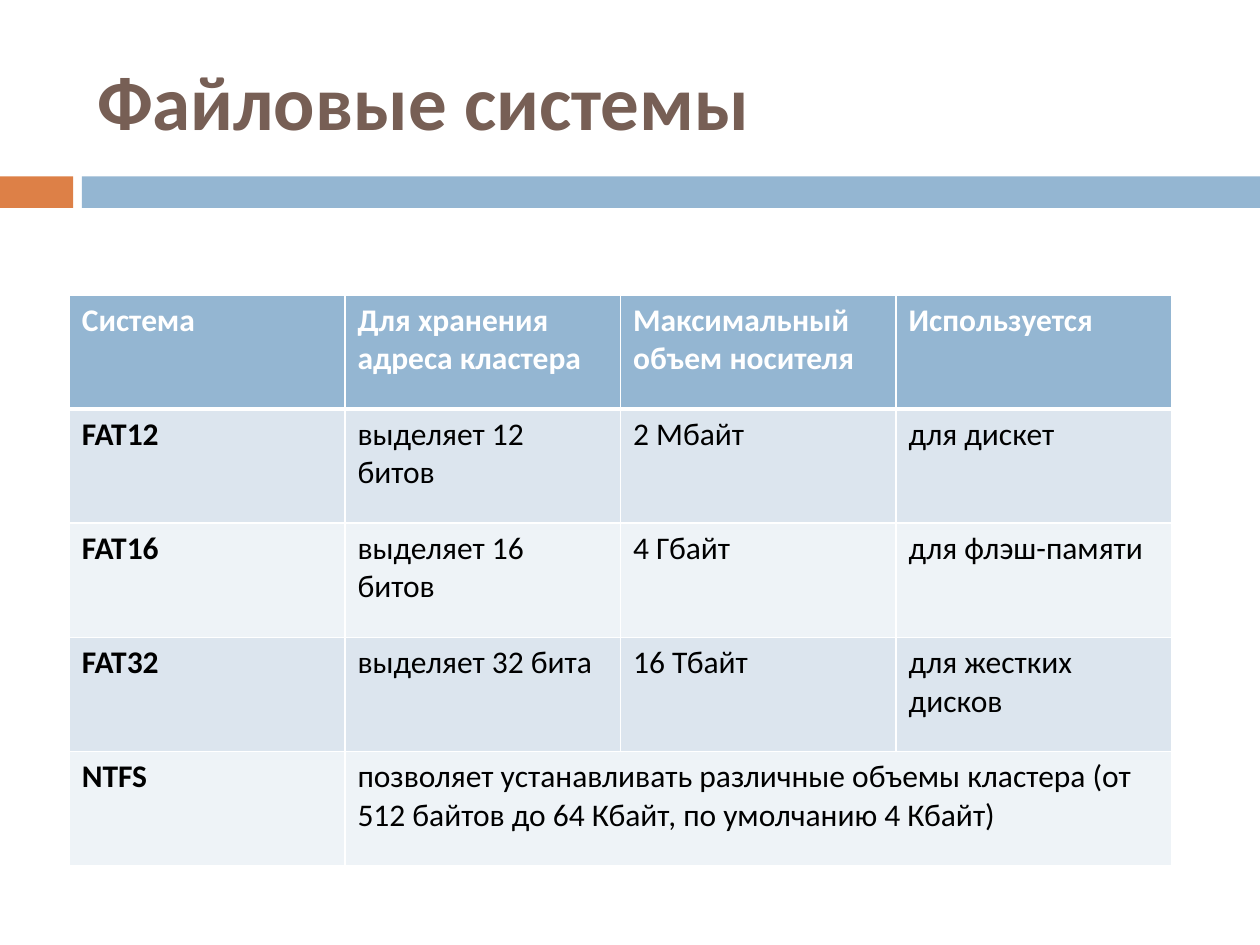
from lxml.etree import SubElement
from pptx import Presentation
from pptx.dml.color import RGBColor
from pptx.enum.shapes import MSO_SHAPE
from pptx.enum.text import MSO_ANCHOR, MSO_AUTO_SIZE, PP_ALIGN
from pptx.oxml import parse_xml
from pptx.oxml.ns import nsdecls, qn
from pptx.util import Inches, Pt

BLUE, ORANGE, BROWN = "94B6D2", "DD8047", "775F55"
WHITE, BLACK = "FFFFFF", "000000"
BANDS = ("DCE5EE", "EEF3F7")
ROWS = [
    ["Система", "Для хранения адреса кластера", "Максимальный объем носителя", "Используется"],
    ["FAT12", "выделяет 12 битов", "2 Мбайт", "для дискет"],
    ["FAT16", "выделяет 16 битов", "4 Гбайт", "для флэш-памяти"],
    ["FAT32", "выделяет 32 бита", "16 Тбайт", "для жестких дисков"],
    ["NTFS", "позволяет устанавливать различные объемы кластера "
             "(от 512 байтов до 64 Кбайт, по умолчанию 4 Кбайт)"],
]


def paint(fill, color):
    """Apply a solid hex colour to a fill."""
    fill.solid()
    fill.fore_color.rgb = RGBColor.from_string(color)


def write(frame, text, size=18, color=BLACK, bold=False):
    """Write one left-aligned formatted run into a text frame."""
    para = frame.paragraphs[0]
    para.alignment = PP_ALIGN.LEFT
    run = para.add_run()
    run.text = text
    run.font.name = "Calibri"
    run.font.size = Pt(size)
    run.font.bold = bold
    paint(run.font.fill, color)


def edge(cell, **widths):
    """Draw white cell borders, 1 pt unless a side is given a width."""
    props = cell._tc.get_or_add_tcPr()
    for spot, side in enumerate("LRTB"):
        width = Pt(widths.get(side, 1))
        line = parse_xml(f'<a:ln{side} {nsdecls("a")} w="{width}"/>')
        fill = SubElement(line, qn("a:solidFill"))
        SubElement(fill, qn("a:srgbClr"), val=WHITE)
        props.insert(spot, line)


def add_bar(slide, left, top, width, height, color):
    """Add a plain filled bar."""
    bar = slide.shapes.add_shape(
        MSO_SHAPE.RECTANGLE, Inches(left), Inches(top), Inches(width), Inches(height))
    bar.shadow.inherit = False
    paint(bar.fill, color)
    bar.line.fill.background()


def add_strip(slide, left, top, width, height):
    """Add the two-colour strip under the title."""
    start = left + 0.65
    add_bar(slide, left, top, 0.58, height, ORANGE)
    add_bar(slide, start, top, width - 0.65, height, BLUE)


def add_title(slide, left, top, width, height):
    """Place and format the title placeholder."""
    title = slide.shapes.title
    title.left, title.top = Inches(left), Inches(top)
    title.width, title.height = Inches(width), Inches(height)
    frame = title.text_frame
    frame.word_wrap = True
    frame.auto_size = MSO_AUTO_SIZE.NONE
    frame.vertical_anchor = MSO_ANCHOR.MIDDLE
    write(frame, "Файловые системы", size=44, color=BROWN, bold=True)


def add_grid(slide, left, top, width, height):
    """Add the file system table."""
    count = len(ROWS[0])
    table = slide.shapes.add_table(
        len(ROWS), count, Inches(left), Inches(top), Inches(width), Inches(height)).table
    for col in table.columns:
        col.width = Inches(width / count)
    for r, row in enumerate(ROWS):
        table.rows[r].height = Inches(height / len(ROWS))
        head = r == 0
        for c in range(count):
            cell = table.cell(r, c)
            paint(cell.fill, BLUE if head else BANDS[(r - 1) % 2])
            edge(cell, B=3 if head else 1, T=3 if r == 1 else 1)
            if c < len(row):
                write(cell.text_frame, row[c], color=WHITE if head else BLACK,
                      bold=head or c == 0)
        if len(row) < count:
            table.cell(r, len(row) - 1).merge(table.cell(r, count - 1))


def main():
    """Build and save the slide."""
    deck = Presentation()
    deck.slide_width, deck.slide_height = Inches(10), Inches(7.5)
    slide = deck.slides.add_slide(deck.slide_layouts[5])
    paint(slide.background.fill, WHITE)
    add_strip(slide, 0, 1.4, 10, 0.25)
    add_title(slide, 0.67, 0.25, 8.92, 1.08)
    add_grid(slide, 0.55, 2.34, 8.75, 4.53)
    deck.save("out.pptx")


if __name__ == "__main__":
    main()
